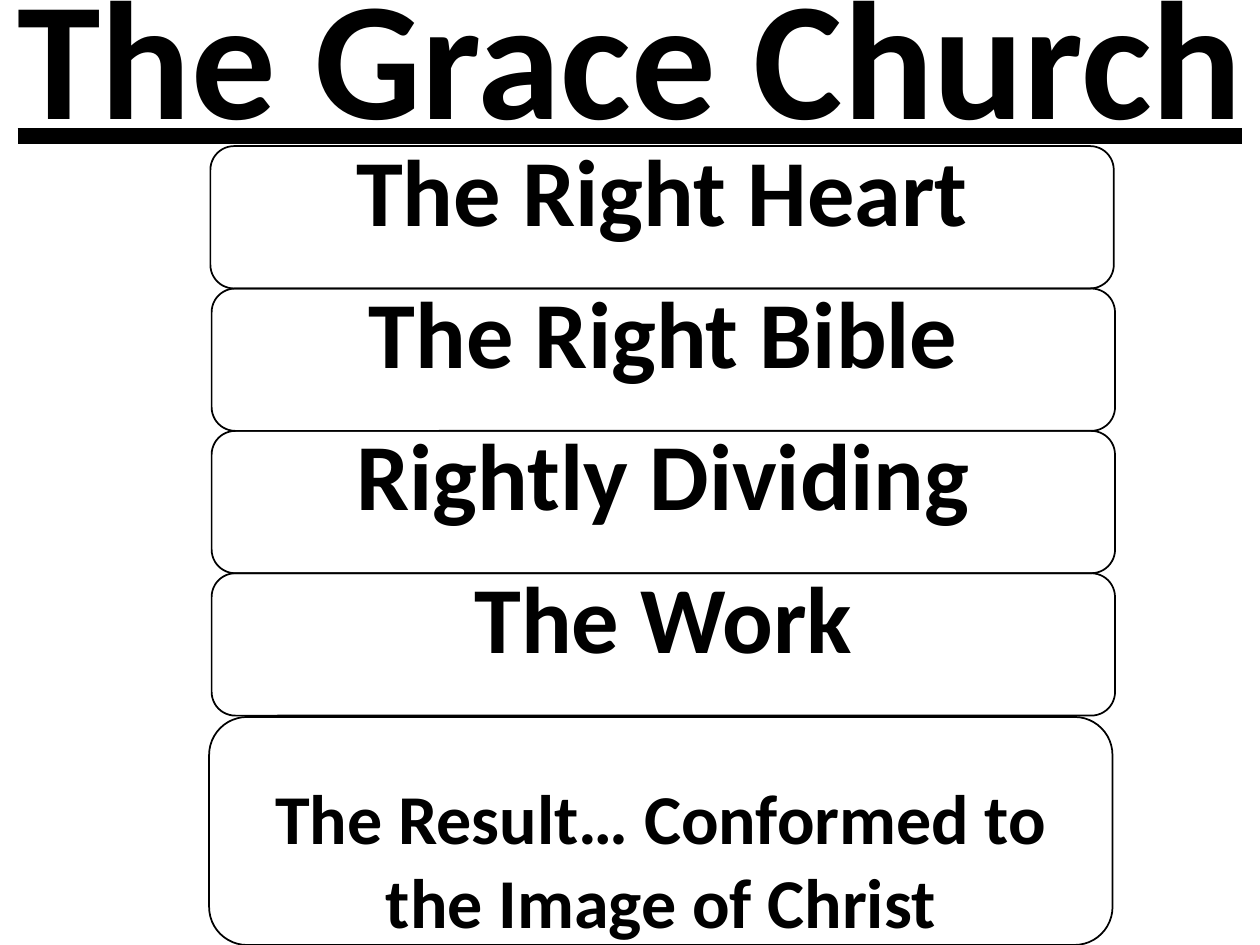
import pptx
import pptx.util
import pptx.dml.color
import pptx.enum.shapes
import pptx.enum.text

Inches = pptx.util.Inches
Pt = pptx.util.Pt
ANCHOR = pptx.enum.text.MSO_ANCHOR

TITLE = "The Grace Church"
STEPS = [
    ("The Right Heart", 1.67),
    ("The Right Bible", 1.68),
    ("Rightly Dividing", 1.68),
    ("The Work", 1.68),
]
RESULT = "The Result… Conformed to the Image of Christ"
BLACK = "000000"
TOP, BOX_W, STEP_H, RESULT_H = 1.16, 7.17, 1.13, 1.81
STEP_FORMAT = dict(margin_top=0, margin_bottom=Inches(0.46),
                   vertical_anchor=ANCHOR.MIDDLE)
RESULT_FORMAT = dict(margin_top=Inches(0.37), margin_bottom=0,
                     vertical_anchor=ANCHOR.TOP)
TITLE_FORMAT = dict(margin_top=0, margin_bottom=Inches(1.2),
                    vertical_anchor=ANCHOR.MIDDLE)


def color(hex_value):
    return pptx.dml.color.RGBColor.from_string(hex_value)


def set_all(obj, values):
    for name, value in values.items():
        setattr(obj, name, value)


def write(sp, text, size, frame_format, underline=None):
    tf = sp.text_frame
    set_all(tf, dict(word_wrap=True, auto_size=pptx.enum.text.MSO_AUTO_SIZE.NONE))
    set_all(tf, frame_format)
    p = tf.paragraphs[0]
    p.alignment = pptx.enum.text.PP_ALIGN.CENTER
    r = p.add_run()
    r.text = text
    set_all(r.font, dict(name="Calibri", size=Pt(size), bold=True, underline=underline))
    r.font.color.rgb = color(BLACK)
    return p


def add_box(s, text, left, top, height, size, frame_format):
    sp = s.shapes.add_shape(pptx.enum.shapes.MSO_SHAPE.ROUNDED_RECTANGLE,
                            Inches(left), Inches(top), Inches(BOX_W), Inches(height))
    sp.shadow.inherit = False
    sp.fill.background()
    sp.line.color.rgb = color(BLACK)
    sp.line.width = Pt(1)
    write(sp, text, size, frame_format)


prs = pptx.Presentation()
set_all(prs, dict(slide_width=Inches(10), slide_height=Inches(7.5)))
s = prs.slides.add_slide(prs.slide_layouts[5])

title = s.shapes.title
set_all(title, dict(left=0, top=Inches(0.39), width=Inches(10), height=Inches(1.45)))
write(title, TITLE, 96.3, TITLE_FORMAT, underline=True).line_spacing = 0.9

for i, (text, left) in enumerate(STEPS):
    add_box(s, text, left, TOP + i * STEP_H, STEP_H, 54, STEP_FORMAT)
add_box(s, RESULT, 1.66, 7.5 - RESULT_H, RESULT_H, 40, RESULT_FORMAT)

prs.save("out.pptx")
